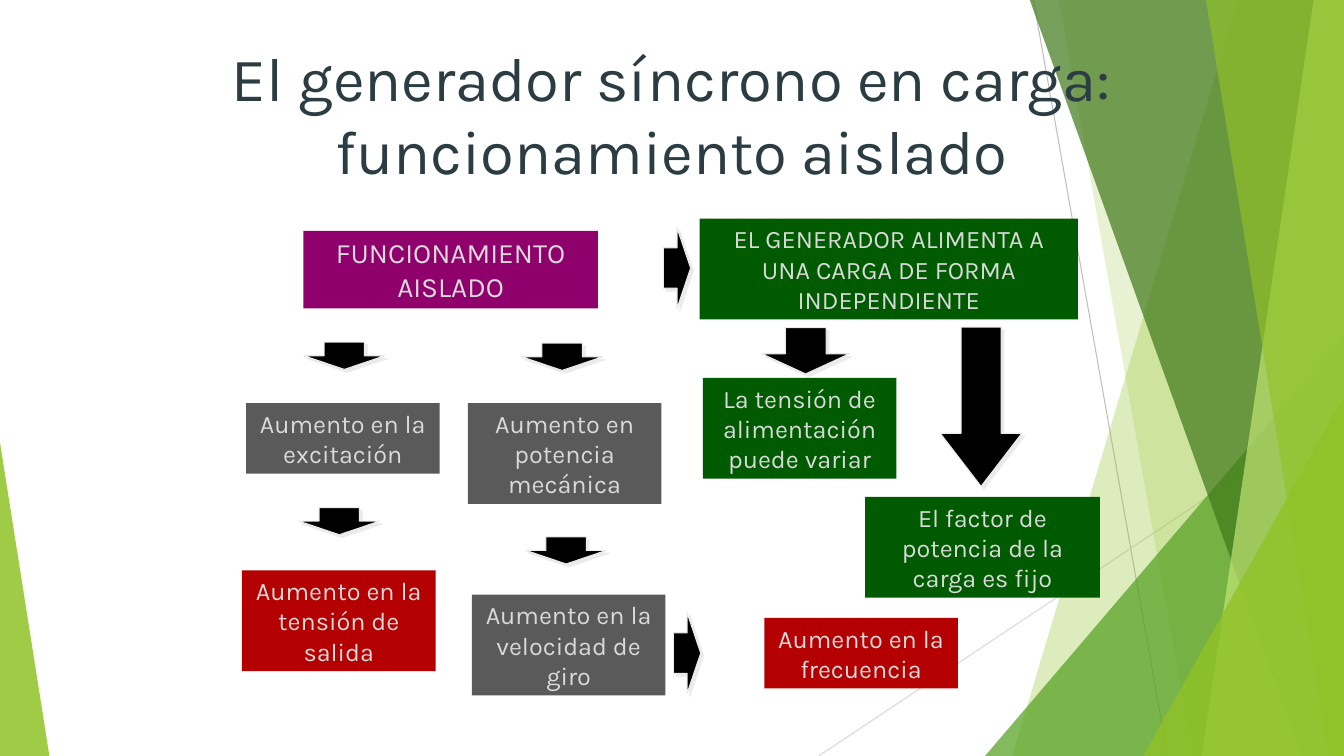
from lxml import etree
from pptx import Presentation
from pptx.dml.color import RGBColor
from pptx.enum.shapes import MSO_CONNECTOR, MSO_SHAPE
from pptx.enum.text import MSO_ANCHOR, MSO_AUTO_SIZE, PP_ALIGN
from pptx.oxml.ns import qn
from pptx.util import Inches, Pt

RECTANGLE = MSO_SHAPE.RECTANGLE
RIGHT_ARROW = MSO_SHAPE.RIGHT_ARROW
TRIANGLE = MSO_SHAPE.ISOSCELES_TRIANGLE
STRAIGHT = MSO_CONNECTOR.STRAIGHT
CENTER = PP_ALIGN.CENTER
TOP, MIDDLE = MSO_ANCHOR.TOP, MSO_ANCHOR.MIDDLE
FIT_SHAPE, NO_FIT = MSO_AUTO_SIZE.SHAPE_TO_FIT_TEXT, MSO_AUTO_SIZE.NONE

FONT = "Karla"
WIDTH, HEIGHT = 13.33, 7.5
TITLE_COLOR = RGBColor(0x2C, 0x3C, 0x43)
BOX_TEXT = RGBColor(0xD9, 0xD9, 0xD9)
BLACK = RGBColor(0, 0, 0)
ARROW_EDGE = RGBColor(0xEB, 0xEB, 0xEB)
DARK_GREEN = RGBColor(0x00, 0x5A, 0x00)
PURPLE = RGBColor(0x90, 0x00, 0x6C)
GRAY = RGBColor(0x5A, 0x5A, 0x5A)
RED = RGBColor(0xB4, 0x00, 0x00)
LIME = RGBColor(0x90, 0xC2, 0x26)
LEAF = RGBColor(0x54, 0xA0, 0x21)
FOREST = RGBColor(0x3F, 0x78, 0x19)
PALE_LIME = RGBColor(0xC0, 0xE4, 0x74)
LINE_GRAY = RGBColor(0xBF, 0xBF, 0xBF)
LINE_LIGHT = RGBColor(0xD9, 0xD9, 0xD9)


class SlideBuilder:
    def __init__(self, presentation):
        self.slide = presentation.slides.add_slide(presentation.slide_layouts[5])
        self.shapes = self.slide.shapes
        self.decoration = self.shapes.add_group_shape().shapes

    def fill(self, shape, color, opacity=100):
        shape.shadow.inherit = False
        shape.fill.solid()
        shape.fill.fore_color.rgb = color
        shape.line.fill.background()
        if opacity < 100:
            color_element = shape._element.spPr.find(qn("a:solidFill"))[0]
            etree.SubElement(color_element, qn("a:alpha"), val=str(opacity * 1000))

    def set_text(self, shape, text, size, color, anchor, auto_size):
        frame = shape.text_frame
        frame.word_wrap = True
        frame.auto_size = auto_size
        frame.vertical_anchor = anchor
        paragraph = frame.paragraphs[0]
        paragraph.alignment = CENTER
        run = paragraph.add_run()
        run.text = text
        run.font.name = FONT
        run.font.size = Pt(size)
        run.font.color.rgb = color

    def title(self, text, left, top, width, height):
        shape = self.shapes.title
        shape.left, shape.top = Inches(left), Inches(top)
        shape.width, shape.height = Inches(width), Inches(height)
        self.set_text(shape, text, 44, TITLE_COLOR, MIDDLE, NO_FIT)
        # The title is drawn in front of the decoration
        self.shapes._spTree.append(shape._element)

    def line(self, x1, y1, x2, y2, color):
        connector = self.decoration.add_connector(
            STRAIGHT, Inches(x1), Inches(y1), Inches(x2), Inches(y2))
        connector.line.color.rgb = color
        connector.line.width = Pt(0.75)
        etree.SubElement(connector._element.spPr, qn("a:effectLst"))

    def band(self, top_x, bottom_x, color, opacity):
        """Fill from a slanted left edge to the right side of the slide."""
        builder = self.decoration.build_freeform(Inches(top_x), Inches(-0.01))
        corners = [(WIDTH, -0.01), (WIDTH, HEIGHT), (bottom_x, HEIGHT)]
        builder.add_line_segments([(Inches(x), Inches(y)) for x, y in corners])
        self.fill(builder.convert_to_shape(), color, opacity)

    def triangle(self, left, top, width, apex, color, opacity):
        shape = self.decoration.add_shape(
            TRIANGLE, Inches(left), Inches(top), Inches(width), Inches(HEIGHT - top))
        shape.adjustments[0] = apex
        self.fill(shape, color, opacity)

    def box(self, text, left, top, width, height, color, size=18):
        shape = self.shapes.add_shape(
            RECTANGLE, Inches(left), Inches(top), Inches(width), Inches(height))
        self.fill(shape, color)
        self.set_text(shape, text, size, BOX_TEXT, TOP, FIT_SHAPE)

    def arrow(self, left, top, rotation=90, length=0.27, breadth=0.8,
              adjustments=(0.5, 0.5)):
        """Place a block arrow by its box before rotation."""
        shape = self.shapes.add_shape(
            RIGHT_ARROW, Inches(left), Inches(top), Inches(length), Inches(breadth))
        shape.rotation = rotation
        for index, value in enumerate(adjustments):
            shape.adjustments[index] = value
        self.fill(shape, BLACK)
        shape.line.color.rgb = ARROW_EDGE
        shape.line.width = Pt(0.75)
        effects = shape._element.spPr.find(qn("a:effectLst"))
        shadow = etree.SubElement(
            effects, qn("a:outerShdw"), dist=str(Pt(2.8)), dir="2700000",
            algn="ctr", rotWithShape="0")
        etree.SubElement(shadow, qn("a:srgbClr"), val=str(ARROW_EDGE))


def main():
    presentation = Presentation()
    presentation.slide_width = Inches(WIDTH)
    presentation.slide_height = Inches(HEIGHT)
    builder = SlideBuilder(presentation)

    builder.line(10.25, 0, 11.58, HEIGHT, LINE_GRAY)
    builder.line(WIDTH, 4.03, 8.12, HEIGHT, LINE_LIGHT)
    builder.band(12.28, 10.04, LIME, 30)
    builder.band(10.5, 11.83, LIME, 20)
    builder.triangle(9.77, 3.33, 3.56, 1, LEAF, 72)
    builder.band(10.21, 12.91, FOREST, 70)
    builder.band(13.03, 11.92, PALE_LIME, 70)
    builder.band(11.96, 13.18, LIME, 65)
    builder.triangle(11.34, 3.93, 1.99, 1, LIME, 80)
    builder.triangle(0, 4.39, 0.49, 0, LIME, 85)

    builder.title("El generador síncrono en carga: funcionamiento aislado",
                  1.75, 0.5, 9.83, 1.25)

    builder.box("EL GENERADOR ALIMENTA A UNA CARGA DE FORMA INDEPENDIENTE",
                6.94, 2.17, 3.75, 1, DARK_GREEN)
    builder.box("FUNCIONAMIENTO AISLADO", 3.01, 2.29, 2.92, 0.77, PURPLE, size=20)
    builder.box("El factor de potencia de la carga es fijo",
                8.58, 4.93, 2.33, 1, DARK_GREEN)
    for text, left, top, height, color in [
        ("La tensión de alimentación puede variar", 6.97, 3.75, 1, DARK_GREEN),
        ("Aumento en la excitación", 2.44, 4, 0.7, GRAY),
        ("Aumento en la tensión de salida", 2.4, 5.66, 1, RED),
        ("Aumento en potencia mecánica", 4.64, 4, 1, GRAY),
        ("Aumento en la velocidad de giro", 4.68, 5.9, 1, GRAY),
        ("Aumento en la frecuencia", 7.58, 6.13, 0.7, RED),
    ]:
        builder.box(text, left, top, 1.92, height, color)

    for left, top in [(3.28, 3.13), (5.44, 3.14), (3.23, 4.77), (5.48, 5.06)]:
        builder.arrow(left, top)
    for left, top in [(6.58, 2.26), (6.68, 6.08)]:
        builder.arrow(left, top, rotation=0)
    builder.arrow(8.94, 3.63, length=1.58, breadth=0.81, adjustments=(0.49, 0.65))
    builder.arrow(7.76, 3.05, length=0.46, breadth=0.86, adjustments=(0.47, 0.43))

    presentation.save("out.pptx")


if __name__ == "__main__":
    main()
